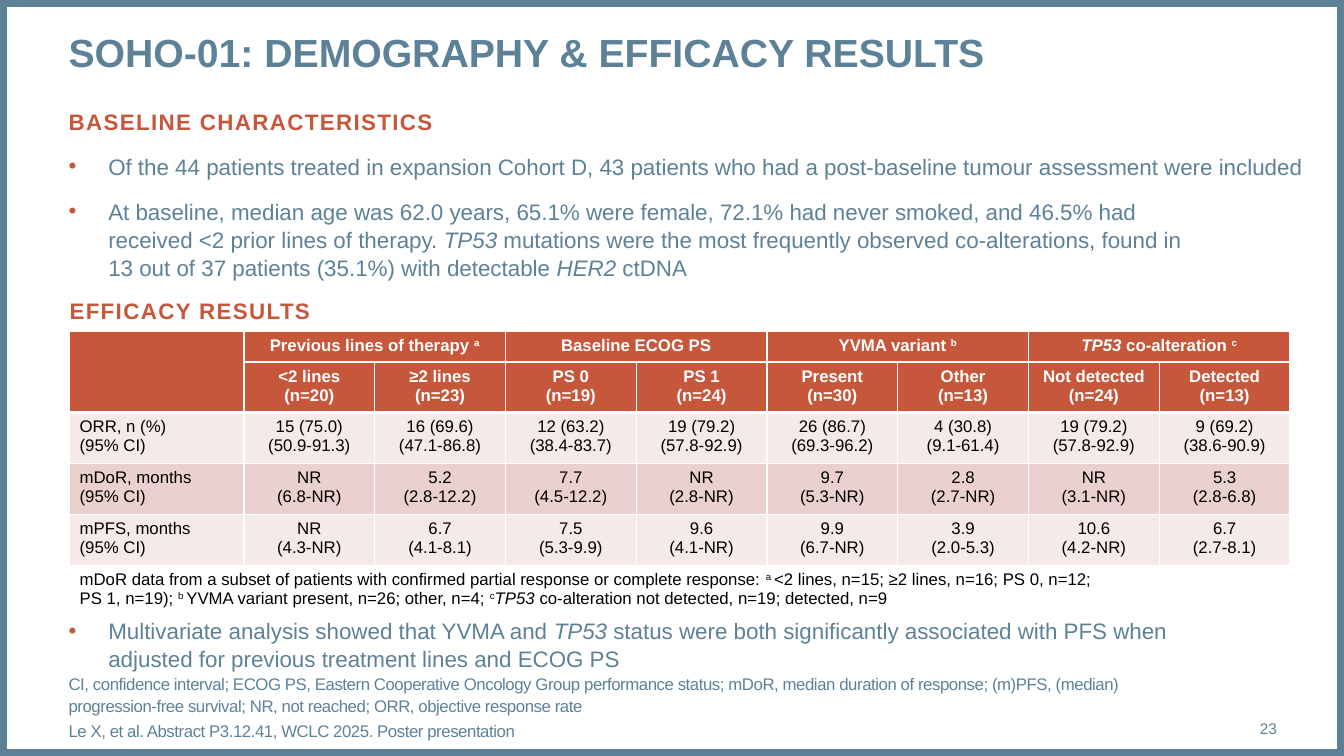
from dataclasses import dataclass

from lxml.etree import SubElement
from pptx import Presentation
from pptx.dml.color import RGBColor
from pptx.enum.shapes import MSO_SHAPE
from pptx.enum.text import MSO_ANCHOR, PP_ALIGN
from pptx.oxml.ns import qn
from pptx.util import Pt

SLATE = RGBColor(0x5D, 0x82, 0x98)
RUST = RGBColor(0xC6, 0x57, 0x3B)
BLUSH = RGBColor(0xF5, 0xEA, 0xE8)
ROSE = RGBColor(0xEA, 0xD1, 0xCE)
WHITE = RGBColor(0xFF, 0xFF, 0xFF)
BLACK = RGBColor(0, 0, 0)

PLAIN, ITALIC, RAISED = "plain", "italic", "raised"


@dataclass
class Style:
    """Look of the text in one paragraph."""

    size: float
    color: RGBColor
    bold: bool = False
    tracking: float = 0
    line: float = 1
    before: float = 0
    bullet: bool = False
    align: PP_ALIGN = PP_ALIGN.LEFT


TITLE = Style(28, SLATE, bold=True)
HEADING = Style(16, RUST, bold=True, tracking=1)
BULLET = Style(16, SLATE, line=1.05, before=12, bullet=True)
FOOTER = Style(12, SLATE, tracking=-0.3, line=1.05, before=3)
NUMBER = Style(11, SLATE, align=PP_ALIGN.RIGHT)
HEADER = Style(12, WHITE, bold=True, align=PP_ALIGN.CENTER)
VALUE = Style(12, BLACK, align=PP_ALIGN.CENTER)
LABEL = Style(12, BLACK)

COHORT = [("Of the 44 patients treated in expansion Cohort D, 43 patients who had "
           "a post-baseline tumour assessment were included", PLAIN)]
BASELINE = [
    ("At baseline, median age was 62.0 years, 65.1% were female, 72.1% had never "
     "smoked, and 46.5% had \nreceived <2 prior lines of therapy. ", PLAIN),
    ("TP53", ITALIC),
    (" mutations were the most frequently observed co-alterations, found in \n"
     "13 out of 37 patients (35.1%) with detectable ", PLAIN),
    ("HER2", ITALIC),
    (" ctDNA", PLAIN),
]
MULTIVARIATE = [
    ("Multivariate analysis showed that YVMA and ", PLAIN),
    ("TP53", ITALIC),
    (" status were both significantly associated with PFS when adjusted for "
     "previous treatment lines and ECOG PS", PLAIN),
]
ABBREVIATIONS = [("CI, confidence interval; ECOG PS, Eastern Cooperative Oncology Group "
                  "performance status; mDoR, median duration of response; (m)PFS, (median) "
                  "progression-free survival; NR, not reached; ORR, objective response rate",
                  PLAIN)]
CITATION = [("Le X, et al. Abstract P3.12.41, WCLC 2025. Poster presentation", PLAIN)]

GROUPS = [
    [("Previous lines of therapy ", PLAIN), ("a", RAISED)],
    [("Baseline ECOG PS", PLAIN)],
    [("YVMA variant ", PLAIN), ("b", RAISED)],
    [("TP53", ITALIC), (" co-alteration ", PLAIN), ("c", RAISED)],
]
SUBGROUPS = ["<2 lines\n(n=20)", "≥2 lines\n(n=23)", "PS 0\n(n=19)", "PS 1\n(n=24)",
             "Present\n(n=30)", "Other\n(n=13)", "Not detected\n(n=24)", "Detected\n(n=13)"]
OUTCOMES = [
    ["ORR, n (%)\n(95% CI)", "15 (75.0)\n(50.9-91.3)", "16 (69.6)\n(47.1-86.8)",
     "12 (63.2)\n(38.4-83.7)", "19 (79.2)\n(57.8-92.9)", "26 (86.7)\n(69.3-96.2)",
     "4 (30.8)\n(9.1-61.4)", "19 (79.2)\n(57.8-92.9)", "9 (69.2)\n(38.6-90.9)"],
    ["mDoR, months\n(95% CI)", "NR\n(6.8-NR)", "5.2\n(2.8-12.2)", "7.7\n(4.5-12.2)",
     "NR\n(2.8-NR)", "9.7\n(5.3-NR)", "2.8\n(2.7-NR)", "NR\n(3.1-NR)", "5.3\n(2.8-6.8)"],
    ["mPFS, months\n(95% CI)", "NR\n(4.3-NR)", "6.7\n(4.1-8.1)", "7.5\n(5.3-9.9)",
     "9.6\n(4.1-NR)", "9.9\n(6.7-NR)", "3.9\n(2.0-5.3)", "10.6\n(4.2-NR)", "6.7\n(2.7-8.1)"],
]
FOOTNOTE = [
    ("mDoR data from a subset of patients with confirmed partial response or "
     "complete response: ", PLAIN),
    ("a ", RAISED),
    ("<2 lines, n=15; ≥2 lines, n=16; PS 0, n=12; \nPS 1, n=19); ", PLAIN),
    ("b ", RAISED),
    ("YVMA variant present, n=26; other, n=4; ", PLAIN),
    ("c", RAISED),
    ("TP53", ITALIC),
    (" co-alteration not detected, n=19; detected, n=9", PLAIN),
]
ROW_HEIGHTS = [21.6, 36, 36.4, 36.4, 36.4, 35]


def add_span(para, text, kind, style):
    """Add one formatted run."""
    span = para.add_run()
    span.text = text
    font = span.font
    font.name, font.size, font.bold = "Arial", Pt(style.size), style.bold
    font.italic = kind == ITALIC
    font.color.rgb = style.color
    props = span._r.get_or_add_rPr()
    if style.tracking:
        props.set("spc", str(round(style.tracking * 100)))
    if kind == RAISED:
        props.set("baseline", "30000")


def add_bullet(para):
    """Give a paragraph a rust bullet and a hanging indent."""
    props = para._p.get_or_add_pPr()
    props.set("marL", str(Pt(28.35)))
    props.set("indent", str(-Pt(28.35)))
    color = SubElement(props, qn("a:buClr"))
    SubElement(color, qn("a:srgbClr")).set("val", str(RUST))
    SubElement(props, qn("a:buFont")).set("typeface", "Arial")
    SubElement(props, qn("a:buChar")).set("char", "•")


def write(para, spans, style, first=True):
    """Fill a paragraph run by run, breaking lines at newlines."""
    para.alignment = style.align
    para.line_spacing = style.line
    para.space_before = Pt(0 if first else style.before)
    if style.bullet:
        add_bullet(para)
    for text, kind in spans:
        for index, part in enumerate(text.split("\n")):
            if index:
                para.add_line_break()
            add_span(para, part, kind, style)


def add_text(page, left, top, width, height, paragraphs,
             anchor=MSO_ANCHOR.TOP, inset=0, wrap=True):
    """Add a text box holding (spans, style) paragraphs."""
    box = page.shapes.add_textbox(Pt(left), Pt(top), Pt(width), Pt(height))
    frame = box.text_frame
    frame.word_wrap = wrap
    frame.vertical_anchor = anchor
    frame.margin_left = frame.margin_right = 0
    frame.margin_top = frame.margin_bottom = Pt(inset)
    for index, (spans, style) in enumerate(paragraphs):
        para = frame.add_paragraph() if index else frame.paragraphs[0]
        write(para, spans, style, first=index == 0)


def add_frame(page, width, height):
    """Draw the border around the slide."""
    border = page.shapes.add_shape(MSO_SHAPE.RECTANGLE, 0, 0, width, height)
    border.shadow.inherit = False
    border.fill.background()
    border.line.color.rgb = SLATE
    border.line.width = Pt(10)


def format_cell(cell, fill, top=1, bottom=1):
    """Set the fill and the white borders of a cell."""
    props = cell._tc.get_or_add_tcPr()
    for side, width in (("L", 1), ("R", 1), ("T", top), ("B", bottom)):
        line = SubElement(props, qn(f"a:ln{side}"), w=str(Pt(width)))
        color = SubElement(SubElement(line, qn("a:solidFill")), qn("a:srgbClr"))
        color.set("val", str(WHITE))
    if fill is None:
        cell.fill.background()
    else:
        cell.fill.solid()
        cell.fill.fore_color.rgb = fill


def add_results_table(page):
    """Add the efficacy table with its footnote row."""
    table = page.shapes.add_table(6, 9, Pt(49.7), Pt(236.9), Pt(872), Pt(201.8)).table
    table.first_row = table.horz_banding = False
    for index, column in enumerate(table.columns):
        column.width = Pt(93.42 if index else 124.56)
    fills = [RUST, RUST, BLUSH, ROSE, BLUSH, None]
    for index, (row, height, fill) in enumerate(zip(table.rows, ROW_HEIGHTS, fills)):
        row.height = Pt(height)
        for column, cell in enumerate(row.cells):
            thick = index == 1 or (index == 0 and column == 0)
            format_cell(cell, fill, 3 if index == 2 else 1, 3 if thick else 1)
    table.cell(0, 0).merge(table.cell(1, 0))
    table.cell(5, 0).merge(table.cell(5, 8))
    for index, spans in enumerate(GROUPS):
        group = table.cell(0, 2 * index + 1)
        group.merge(table.cell(0, 2 * index + 2))
        write(group.text_frame.paragraphs[0], spans, HEADER)
    for column, text in enumerate(SUBGROUPS, 1):
        write(table.cell(1, column).text_frame.paragraphs[0], [(text, PLAIN)], HEADER)
    for index, outcome in enumerate(OUTCOMES, 2):
        for column, text in enumerate(outcome):
            para = table.cell(index, column).text_frame.paragraphs[0]
            write(para, [(text, PLAIN)], VALUE if column else LABEL)
    write(table.cell(5, 0).text_frame.paragraphs[0], FOOTNOTE, LABEL)


def main():
    """Build the slide and save it."""
    deck = Presentation()
    deck.slide_width, deck.slide_height = Pt(960), Pt(540)
    page = deck.slides.add_slide(deck.slide_layouts[6])
    add_frame(page, deck.slide_width, deck.slide_height)
    add_text(page, 49, 77, 885, 356.4, [
        ([("BASELINE CHARACTERISTICS", PLAIN)], HEADING), (COHORT, BULLET), (BASELINE, BULLET)])
    add_text(page, 49, 20.2, 863.3, 67.7,
             [([("SOHO-01: DEMOGRAPHY & EFFICACY RESULTS", PLAIN)], TITLE)])
    add_text(page, 49, 500.4, 816.5, 28.8, [(ABBREVIATIONS, FOOTER), (CITATION, FOOTER)],
             anchor=MSO_ANCHOR.BOTTOM)
    add_text(page, 850.3, 506.2, 61.9, 28.8, [([("23", PLAIN)], NUMBER)],
             anchor=MSO_ANCHOR.MIDDLE)
    add_text(page, 49.7, 208.8, 182.2, 26.6, [([("EFFICACY RESULTS", PLAIN)], HEADING)],
             inset=3.6, wrap=False)
    add_text(page, 49, 436.3, 793.4, 46.1, [(MULTIVARIATE, BULLET)], inset=3.6)
    add_results_table(page)


    deck.save("out.pptx")


if __name__ == "__main__":
    main()
